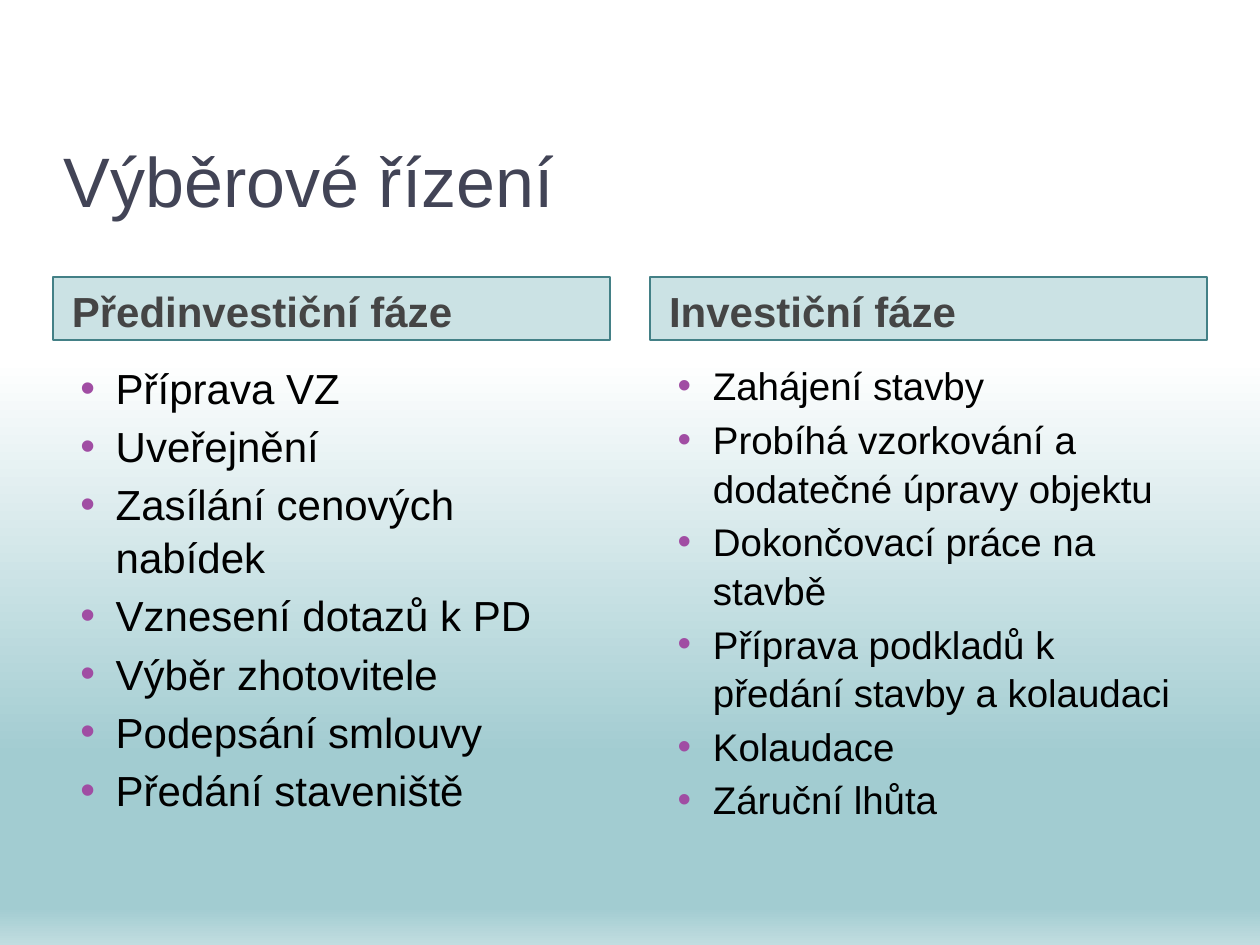
from lxml import etree
from pptx import Presentation
from pptx.dml.color import RGBColor
from pptx.enum.shapes import MSO_SHAPE
from pptx.enum.text import MSO_ANCHOR, PP_ALIGN
from pptx.oxml.ns import qn
from pptx.util import Pt

RECTANGLE = MSO_SHAPE.RECTANGLE
TOP, MIDDLE = MSO_ANCHOR.TOP, MSO_ANCHOR.MIDDLE
LEFT = PP_ALIGN.LEFT

FONT = "Arial"
TEAL, BORDER, BULLET = "328E97", "438086", "A04DA3"
GRADIENT = [(0, "FFFFFF"), (38, "FFFFFF"), (80, "A2CCD1"), (96, "A2CCD1"), (100, "C1DDE0")]
TITLE_BOX = (29.5, 60.5, 660.25, 84.25)
COLUMN_LEFT, COLUMN_TOP, COLUMN_WIDTH, COLUMN_HEIGHT = 30.25, 158.25, 318.25, 350
COLUMN_STEP = 341.25
HEADER_HEIGHT, HEADER_GAP = 36, 8

COLUMNS = [
    ("Předinvestiční fáze", 24, [
        "Příprava VZ",
        "Uveřejnění",
        "Zasílání cenových nabídek",
        "Vznesení dotazů k PD",
        "Výběr zhotovitele",
        "Podepsání smlouvy",
        "Předání staveniště",
    ]),
    ("Investiční fáze", 22, [
        "Zahájení stavby",
        "Probíhá vzorkování a dodatečné úpravy objektu",
        "Dokončovací práce na stavbě",
        "Příprava podkladů k předání stavby a kolaudaci",
        "Kolaudace",
        "Záruční lhůta",
    ]),
]


def color(value):
    return RGBColor.from_string(value)


def set_values(target, values):
    for name, value in values.items():
        setattr(target, name, value)


def set_font(para, size, value, bold=False):
    set_values(para.font, {"name": FONT, "size": Pt(size), "bold": bold})
    para.font.color.rgb = color(value)


def add_text_box(page, box, anchor):
    shape = page.shapes.add_textbox(*map(Pt, box))
    set_values(shape.text_frame, {"word_wrap": True, "vertical_anchor": anchor})
    return shape.text_frame


def paint_background(page):
    fill = page.background.fill
    fill.gradient()
    fill.gradient_angle = 270
    stops = next(page.background._cSld.iter(qn("a:gsLst")))
    for stop in list(stops):
        stops.remove(stop)
    for position, value in GRADIENT:
        stop = etree.SubElement(stops, qn("a:gs"), pos=str(position * 1000))
        etree.SubElement(stop, qn("a:srgbClr"), val=value)


def add_title(page, box, text):
    para = add_text_box(page, box, MIDDLE).paragraphs[0]
    para.text = text
    set_font(para, 40, "424456")


def add_header(page, box, text):
    shape = page.shapes.add_shape(RECTANGLE, *map(Pt, box))
    shape.shadow.inherit = False
    shape.fill.solid()
    shape.fill.fore_color.rgb = color(TEAL)
    fill_color = shape.fill._xPr.find(qn("a:solidFill"))[0]
    etree.SubElement(fill_color, qn("a:alpha"), val="25000")
    shape.line.color.rgb = color(BORDER)
    shape.line.width = Pt(1)
    frame = shape.text_frame
    set_values(frame, {"word_wrap": True, "vertical_anchor": MIDDLE,
                       "margin_left": Pt(10.8), "margin_top": Pt(6.6)})
    para = frame.paragraphs[0]
    para.text = text
    para.alignment = LEFT
    set_font(para, 24, "454545", True)


def add_bullet(para):
    properties = para._p.get_or_add_pPr()
    properties.set("marL", str(Pt(28.8)))
    properties.set("indent", str(Pt(-20.16)))
    bullet_color = etree.SubElement(properties, qn("a:buClr"))
    etree.SubElement(bullet_color, qn("a:srgbClr"), val=BULLET)
    etree.SubElement(properties, qn("a:buFont"), typeface=FONT)
    etree.SubElement(properties, qn("a:buChar"), char="•")


def add_list(page, box, items, size):
    frame = add_text_box(page, box, TOP)
    for index, item in enumerate(items):
        para = frame.add_paragraph() if index else frame.paragraphs[0]
        para.text = item
        add_bullet(para)
        set_values(para, {"line_spacing": 1.05, "space_before": Pt(3 if index else 0)})
        set_font(para, size, "000000")


def add_column(page, box, heading, size, items):
    left, top, width, height = box
    list_offset = HEADER_HEIGHT + HEADER_GAP
    add_header(page, (left, top, width, HEADER_HEIGHT), heading)
    add_list(page, (left, top + list_offset, width, height - list_offset), items, size)


def main():
    deck = Presentation()
    deck.slide_width, deck.slide_height = Pt(720), Pt(540)
    page = deck.slides.add_slide(deck.slide_layouts[6])
    paint_background(page)
    add_title(page, TITLE_BOX, "Výběrové řízení")
    for index, (heading, size, items) in enumerate(COLUMNS):
        box = (COLUMN_LEFT + index * COLUMN_STEP, COLUMN_TOP, COLUMN_WIDTH, COLUMN_HEIGHT)
        add_column(page, box, heading, size, items)
    deck.save("out.pptx")


if __name__ == "__main__":
    main()
